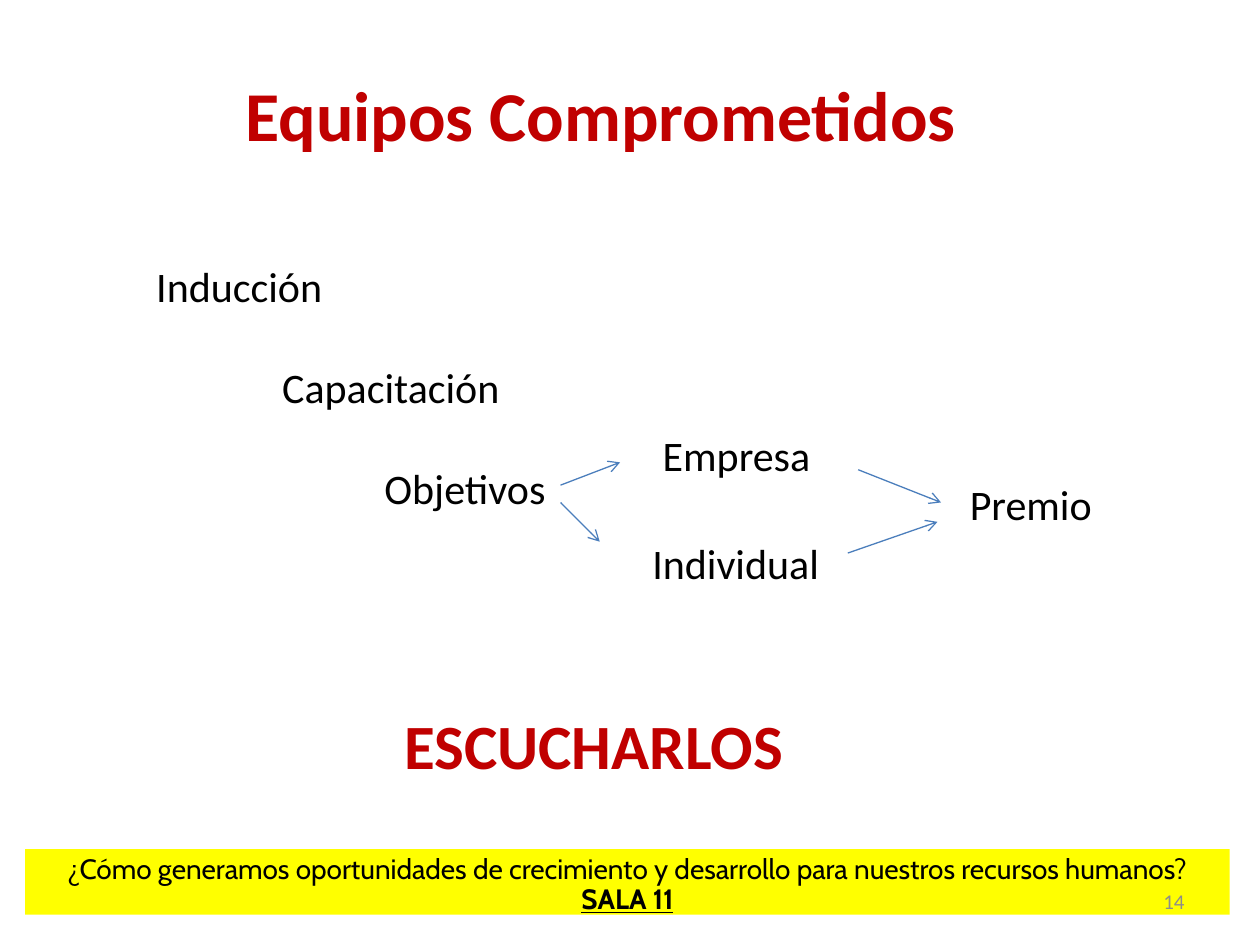
from lxml.etree import SubElement
from pptx import Presentation
from pptx.dml.color import RGBColor
from pptx.enum.shapes import MSO_CONNECTOR as Link, MSO_SHAPE as Shape
from pptx.enum.text import MSO_ANCHOR as Anchor, PP_ALIGN as Align
from pptx.oxml.ns import qn
from pptx.util import Cm, Pt

HUES = {"red": "C00000", "black": "000000", "grey": "8C8C8C",
        "blue": "4B7EBC", "yellow": "FFFF00"}
BODY = {"name": "Calibri", "size": Pt(24)}


def hue(name):
    return RGBColor.from_string(HUES[name])


def add_run(para, text, style, color="black"):
    run = para.add_run()
    run.text = text
    for key, value in style.items():
        setattr(run.font, key, value)
    run.font.color.rgb = hue(color)


def add_text(slide, box, text, style=BODY, color="black", wrap=False):
    """Add a one-paragraph text box and return its frame."""
    frame = slide.shapes.add_textbox(*map(Cm, box)).text_frame
    frame.word_wrap = wrap
    add_run(frame.paragraphs[0], text, style, color)
    return frame


def add_arrow(slide, start, end):
    arrow = slide.shapes.add_connector(
        Link.STRAIGHT, *map(Cm, start), *map(Cm, end))
    arrow.line.color.rgb = hue("blue")
    arrow.line.width = Pt(0.75)
    SubElement(arrow.line._get_or_add_ln(), qn("a:tailEnd"), type="arrow")
    SubElement(arrow._element.spPr, qn("a:effectLst"))


def add_heading(slide, box, text, size):
    style = {"name": "Calibri", "size": Pt(size), "bold": True}
    add_text(slide, box, text, style, "red")


def add_steps(slide, box):
    """Add the stepped list, each line further to the right."""
    frame = add_text(slide, box, "Inducción", wrap=True)
    for text, indent in (("Capacitación", 2.54), ("Objetivos", 4.6)):
        para = frame.add_paragraph()
        para.space_before = Pt(29)
        para._p.get_or_add_pPr().set("marL", str(Cm(indent)))
        add_run(para, text, BODY)


def add_flow(slide, box):
    """Add the steps, the two kinds of goal and the reward they lead to."""
    left, top, width, height = box
    add_steps(slide, (left, top, 8.79, height))
    goals = (("Empresa", 10.21, 3.4, 3.53),
             ("Individual", 10, 5.59, 3.91),
             ("Premio", 16.4, 4.4, 3))
    for text, x, y, wide in goals:
        add_text(slide, (left + x, top + y, wide, 1.27), text)
    arrows = ((8.4, 5, 9.19, 5.79), (8.4, 4.65, 9.6, 4.19),
              (14.4, 4.34, 16.07, 5), (14.19, 6.02, 16, 5.39))
    for x1, y1, x2, y2 in arrows:
        add_arrow(slide, (left + x1, top + y1), (left + x2, top + y2))


def add_footer(slide, box):
    left, top, width, height = box
    bar = slide.shapes.add_shape(Shape.RECTANGLE, *map(Cm, box))
    bar.shadow.inherit = False
    bar.fill.solid()
    bar.fill.fore_color.rgb = hue("yellow")
    bar.line.fill.background()
    frame = bar.text_frame
    frame.word_wrap = True
    frame.vertical_anchor = Anchor.TOP
    para = frame.paragraphs[0]
    for key, value in {"alignment": Align.CENTER, "line_spacing": 0.9,
                       "space_before": Pt(10)}.items():
        setattr(para, key, value)
    style = {"name": "Cabin", "size": Pt(16)}
    add_run(para, "¿Cómo generamos oportunidades de crecimiento y desarrollo "
                  "para nuestros recursos humanos? ", style)
    add_run(para, "SALA 11", {**style, "bold": True, "underline": True})

    number = add_text(slide, (left + 17.7, top + 0.53, 5.92, 1.02), "14",
                      {"name": "Calibri", "size": Pt(12)}, "grey", True)
    number.vertical_anchor = Anchor.MIDDLE
    number.paragraphs[0].alignment = Align.RIGHT


def main():
    deck = Presentation()
    deck.slide_width, deck.slide_height = Cm(25.4), Cm(19.05)
    slide = deck.slides.add_slide(deck.slide_layouts[6])
    add_heading(slide, (4.7, 1.32, 15.01, 1.96), "Equipos Comprometidos", 40)
    add_flow(slide, (2.9, 5.13, 19.4, 7.7))
    add_heading(slide, (7.9, 14.12, 8.23, 1.8), "ESCUCHARLOS", 36)
    add_footer(slide, (0.51, 17.12, 24.28, 1.32))
    deck.save("out.pptx")


if __name__ == "__main__":
    main()
